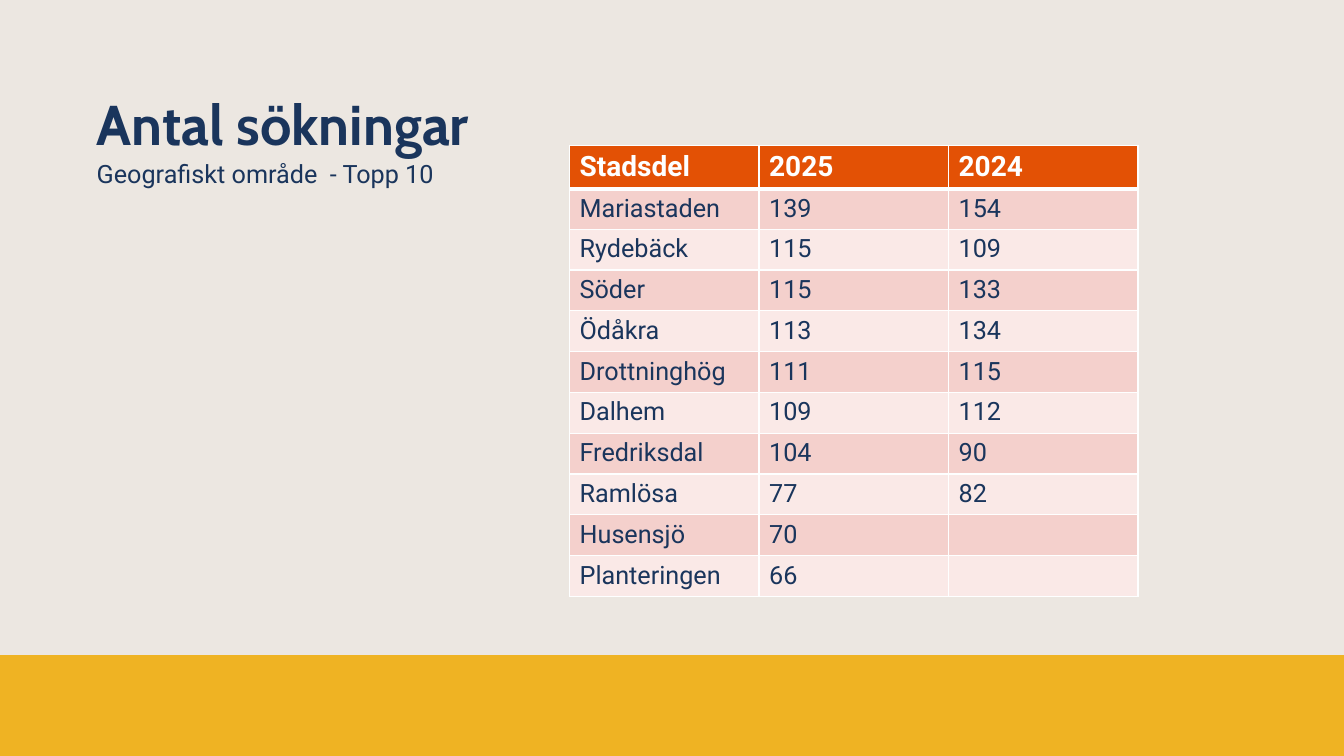
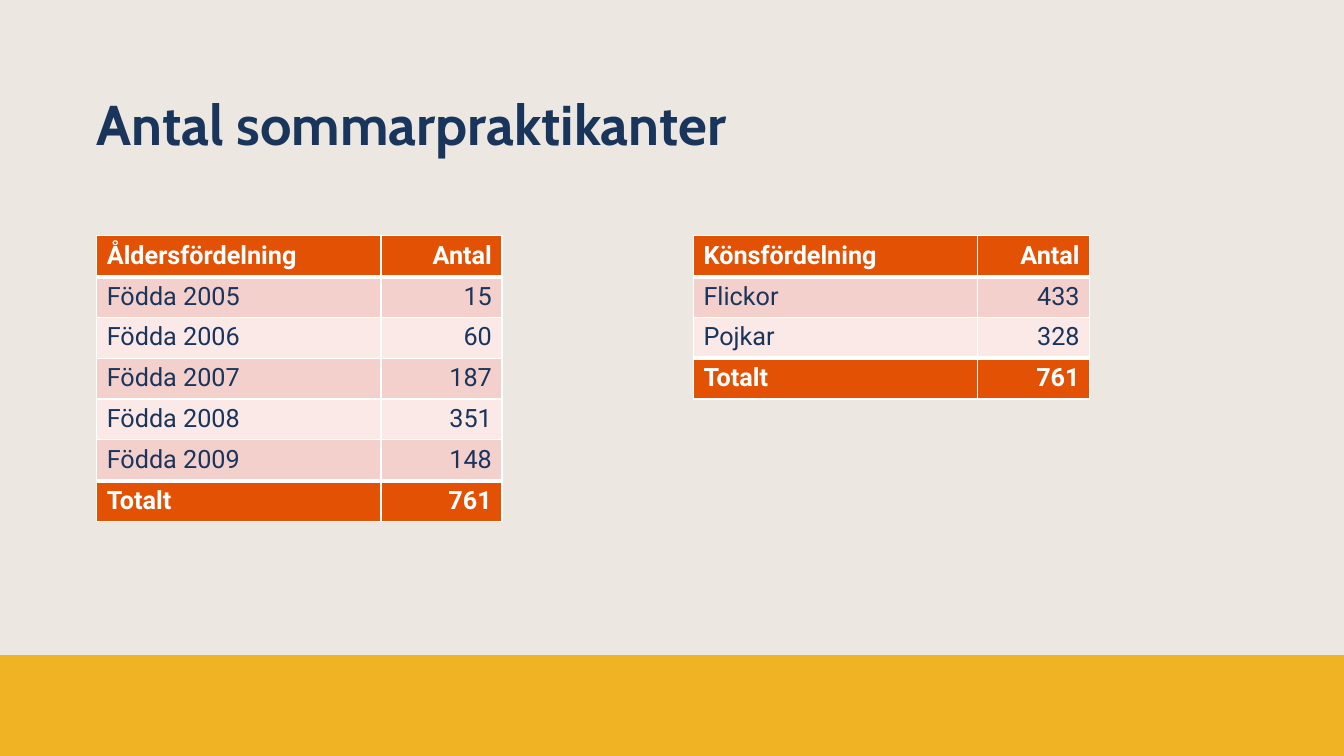
from lxml import etree
from pptx import Presentation
from pptx import util as u
from pptx.dml.color import RGBColor
from pptx.enum import shapes, text
from pptx.oxml.ns import qn

WIDTH, HEIGHT = u.Inches(13.333), u.Inches(7.5)
SAND, AMBER, NAVY, ORANGE, WHITE = "ECE7E1", "EFB323", "1A355C", "E35105", "FEFFFF"
STRIPES = ("F4D0CC", "FAE9E7")
HEADING_FONT, BODY_FONT = "Cabin", "Roboto"
MARGIN = 7.2
ROW = 5.4


def across(percent):
    return round(WIDTH * percent / 100)


def down(percent):
    return round(HEIGHT * percent / 100)


def rgb(hex_value):
    return RGBColor.from_string(hex_value)


def paint(fill, color):
    fill.solid()
    fill.fore_color.rgb = rgb(color)


def write(paragraph, words, size, color=NAVY, bold=False, font=BODY_FONT):
    run = paragraph.add_run()
    run.text = words
    run.font.name = font
    run.font.size = u.Pt(size)
    run.font.bold = bold
    run.font.color.rgb = rgb(color)


def add_text(slide, top, width, height, anchor):
    frame = slide.shapes.add_textbox(
        across(MARGIN), down(top), across(width), down(height)).text_frame
    frame.word_wrap = True
    frame.vertical_anchor = anchor
    frame.margin_left = frame.margin_right = 0
    frame.margin_top = frame.margin_bottom = 0
    return frame.paragraphs[0]


def add_page(deck, title):
    slide = deck.slides.add_slide(deck.slide_layouts[6])
    band_top = down(86.67)
    band = slide.shapes.add_shape(
        shapes.MSO_SHAPE.RECTANGLE, 0, band_top, WIDTH, HEIGHT - band_top)
    band.shadow.inherit = False
    paint(band.fill, AMBER)
    band.line.fill.background()
    heading = add_text(slide, 12.7, 86.25, 8.1, text.MSO_ANCHOR.BOTTOM)
    heading.line_spacing = 0.9
    write(heading, title, 40, bold=True, font=HEADING_FONT)
    return slide


def add_borders(cell, above, below):
    properties = cell._tc.get_or_add_tcPr()
    for side, points in (("L", 1), ("R", 1), ("T", above), ("B", below)):
        line = etree.SubElement(properties, qn("a:ln" + side), w=str(u.Pt(points)))
        fill = etree.SubElement(line, qn("a:solidFill"))
        etree.SubElement(fill, qn("a:srgbClr"), val=WHITE)


def add_data_table(slide, left, top, columns, records, header_size=18,
                   has_total=False, value_align=text.PP_ALIGN.LEFT):
    count = len(records)
    table = slide.shapes.add_table(
        count, len(columns), across(left), down(top),
        across(sum(columns)), down(ROW * count)).table
    for column, width in zip(table.columns, columns):
        column.width = across(width)
    thick_edges = {1, count - 1} if has_total else {1}
    edges = [3 if edge in thick_edges else 1 for edge in range(count + 1)]
    for index, record in enumerate(records):
        table.rows[index].height = down(ROW)
        strong = index == 0 or (has_total and index == count - 1)
        for position, value in enumerate(record):
            cell = table.cell(index, position)
            add_borders(cell, edges[index], edges[index + 1])
            paint(cell.fill, ORANGE if strong else STRIPES[(index - 1) % 2])
            if value:
                paragraph = cell.text_frame.paragraphs[0]
                paragraph.alignment = value_align if position else text.PP_ALIGN.LEFT
                write(paragraph, value, 18 if index else header_size,
                      WHITE if strong else NAVY, strong)
    return table


def build_searches(deck):
    slide = add_page(deck, "Antal sökningar")
    subtitle = add_text(slide, 20.93, 33, 56, text.MSO_ANCHOR.TOP)
    subtitle.font.size = u.Pt(18)
    subtitle.margin = None
    subtitle.space_after = u.Pt(12)
    write(subtitle, "Geografiskt område  - Topp 10", 18)
    districts = add_data_table(slide, 42.38, 19.2, [14.1] * 3, [
        ("Stadsdel", "2025", "2024"),
        ("Mariastaden", "139", "154"),
        ("Rydebäck", "115", "109"),
        ("Söder", "115", "133"),
        ("Ödåkra", "113", "134"),
        ("Drottninghög", "111", "115"),
        ("Dalhem", "109", "112"),
        ("Fredriksdal", "104", "90"),
        ("Ramlösa", "77", "82"),
        ("Husensjö", "70", ""),
        ("Planteringen", "66", ""),
    ], header_size=20)
    districts.rows[0].height = down(5.7)
    districts.rows[1].height = down(5.2)


def build_trainees(deck):
    slide = add_page(deck, "Antal sommarpraktikanter")
    groups = (
        (MARGIN, 9, "Åldersfördelning", [
            ("Födda 2005", 15), ("Födda 2006", 60), ("Födda 2007", 187),
            ("Födda 2008", 351), ("Födda 2009", 148)]),
        (51.6, 8.33, "Könsfördelning", [("Flickor", 433), ("Pojkar", 328)]),
    )
    for left, value_width, label, counts in groups:
        total = sum(number for _, number in counts)
        records = [(label, "Antal")]
        records += [(name, str(number)) for name, number in counts + [("Totalt", total)]]
        add_data_table(slide, left, 31.2, [21.15, value_width], records,
                       has_total=True, value_align=text.PP_ALIGN.RIGHT)


def main():
    deck = Presentation()
    deck.slide_width, deck.slide_height = WIDTH, HEIGHT
    paint(deck.slide_master.background.fill, SAND)
    build_searches(deck)
    build_trainees(deck)
    deck.save("out.pptx")


if __name__ == "__main__":
    main()
